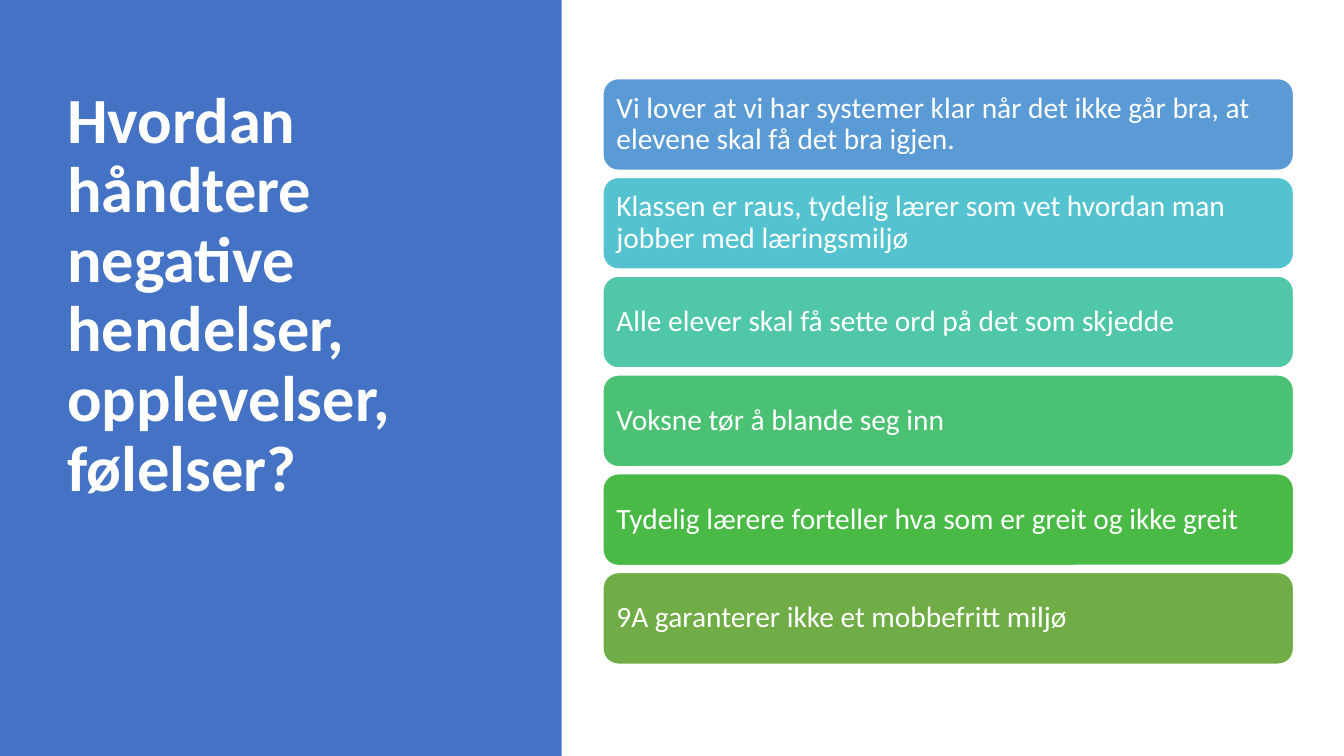
"""Build a slide with a blue title panel and a column of coloured statement bars."""
from dataclasses import dataclass
from typing import Any

import pptx
import pptx.dml.color
import pptx.enum.shapes
import pptx.enum.text
import pptx.util

Inches = pptx.util.Inches
RGBColor = pptx.dml.color.RGBColor
ShapeType = pptx.enum.shapes.MSO_SHAPE
Anchor = pptx.enum.text.MSO_ANCHOR

WHITE = RGBColor(0xFF, 0xFF, 0xFF)
PANEL_BLUE = RGBColor(0x44, 0x72, 0xC4)
SKY_BLUE = RGBColor(0x5B, 0x9B, 0xD5)
TURQUOISE = RGBColor(0x55, 0xC3, 0xCF)
SEA_GREEN = RGBColor(0x50, 0xC8, 0xA7)
MINT_GREEN = RGBColor(0x4B, 0xC1, 0x74)
BRIGHT_GREEN = RGBColor(0x4A, 0xBA, 0x46)
OLIVE_GREEN = RGBColor(0x70, 0xAD, 0x47)

TITLE = "Hvordan håndtere negative hendelser, opplevelser, følelser?"
BAR_TOP = 0.78
BAR_PITCH = 0.98

BAR_FRAME = {
    "word_wrap": True,
    "vertical_anchor": Anchor.MIDDLE,
    "margin_left": Inches(0.09),
    "margin_right": Inches(0.09),
    "margin_top": Inches(0.09),
    "margin_bottom": Inches(0.09),
}
TITLE_FRAME = {"word_wrap": True, "vertical_anchor": Anchor.TOP}
PARAGRAPH_FORMAT = {"line_spacing": 0.9, "alignment": pptx.enum.text.PP_ALIGN.LEFT}
BAR_FONT = {"name": "Calibri", "size": pptx.util.Pt(21), "bold": False}
TITLE_FONT = {"name": "Calibri", "size": pptx.util.Pt(46), "bold": True}


@dataclass(frozen=True)
class Statement:
    text: str
    color: RGBColor


STATEMENTS = [
    Statement(
        "Vi lover at vi har systemer klar når det ikke går bra, at elevene skal få det bra igjen.",
        SKY_BLUE,
    ),
    Statement(
        "Klassen er raus, tydelig lærer som vet hvordan man jobber med læringsmiljø",
        TURQUOISE,
    ),
    Statement("Alle elever skal få sette ord på det som skjedde", SEA_GREEN),
    Statement("Voksne tør å blande seg inn", MINT_GREEN),
    Statement("Tydelig lærere forteller hva som er greit og ikke greit", BRIGHT_GREEN),
    Statement("9A garanterer ikke et mobbefritt miljø", OLIVE_GREEN),
]


def apply_format(target: Any, values: dict[str, Any]) -> None:
    for name, value in values.items():
        setattr(target, name, value)


def write_text(shape: Any, text: str, frame: dict[str, Any], font: dict[str, Any]) -> None:
    apply_format(shape.text_frame, frame)
    paragraph = shape.text_frame.paragraphs[0]
    apply_format(paragraph, PARAGRAPH_FORMAT)
    run = paragraph.add_run()
    run.text = text
    apply_format(run.font, font)
    run.font.color.rgb = WHITE


def add_filled_shape(slide: Any, kind: Any, color: RGBColor, *box: float) -> Any:
    shape = slide.shapes.add_shape(kind, *map(Inches, box))
    shape.shadow.inherit = False
    shape.fill.solid()
    shape.fill.fore_color.rgb = color
    shape.line.fill.background()
    return shape


def add_statement(slide: Any, statement: Statement, index: int) -> None:
    top = BAR_TOP + index * BAR_PITCH
    bar = add_filled_shape(
        slide, ShapeType.ROUNDED_RECTANGLE, statement.color, 5.98, top, 6.85, 0.91
    )
    bar.line.color.rgb = WHITE
    bar.line.width = pptx.util.Pt(1)
    write_text(bar, statement.text, BAR_FRAME, BAR_FONT)


def main() -> None:
    presentation = pptx.Presentation()
    presentation.slide_width = Inches(13.33)
    presentation.slide_height = Inches(7.5)
    slide = presentation.slides.add_slide(presentation.slide_layouts[6])
    add_filled_shape(slide, ShapeType.RECTANGLE, PANEL_BLUE, 0, 0, 5.57, 7.5)
    title = slide.shapes.add_textbox(*map(Inches, (0.57, 0.82, 4.16, 4.4)))
    write_text(title, TITLE, TITLE_FRAME, TITLE_FONT)
    for index, statement in enumerate(STATEMENTS):
        add_statement(slide, statement, index)
    presentation.save("out.pptx")


if __name__ == "__main__":
    main()
